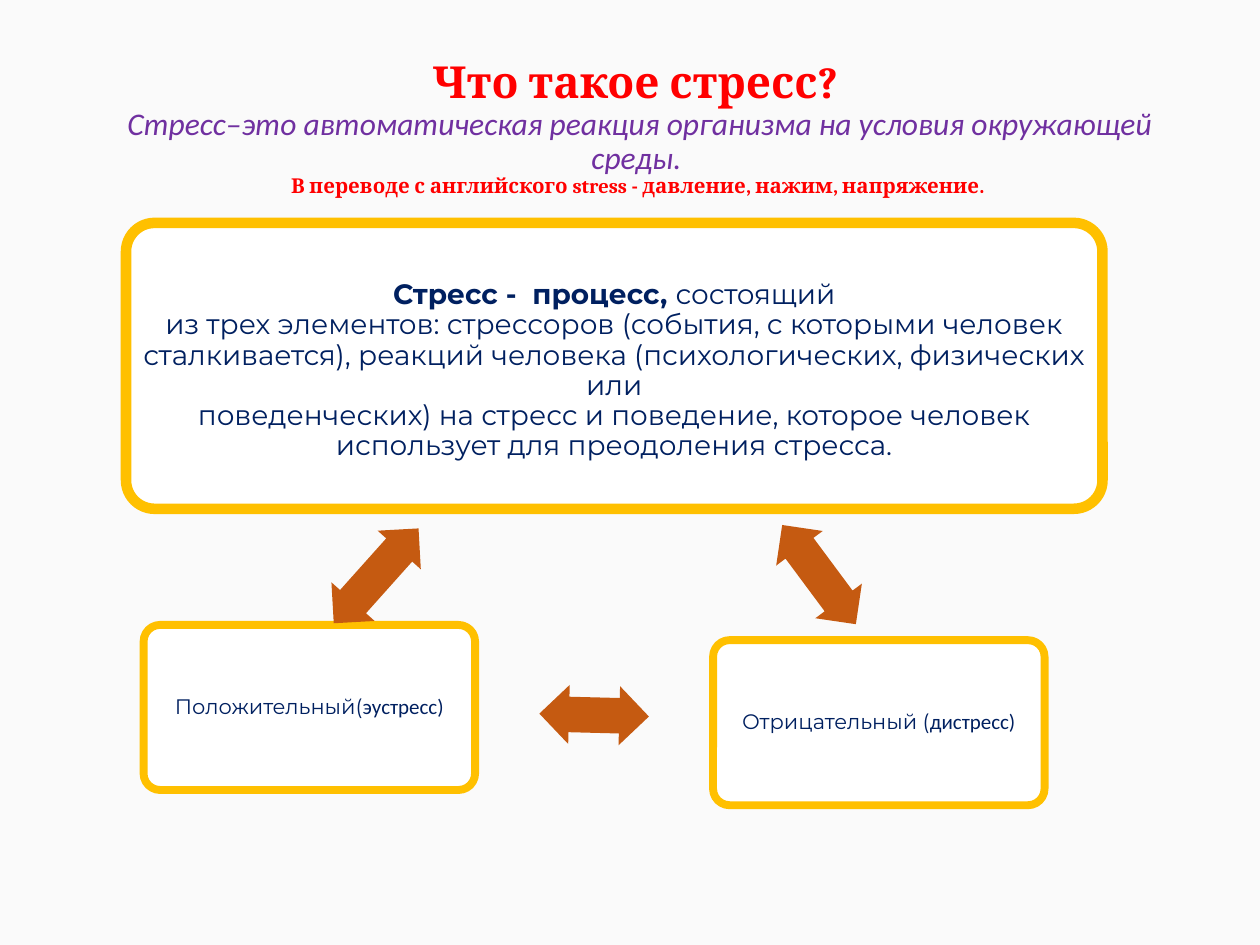
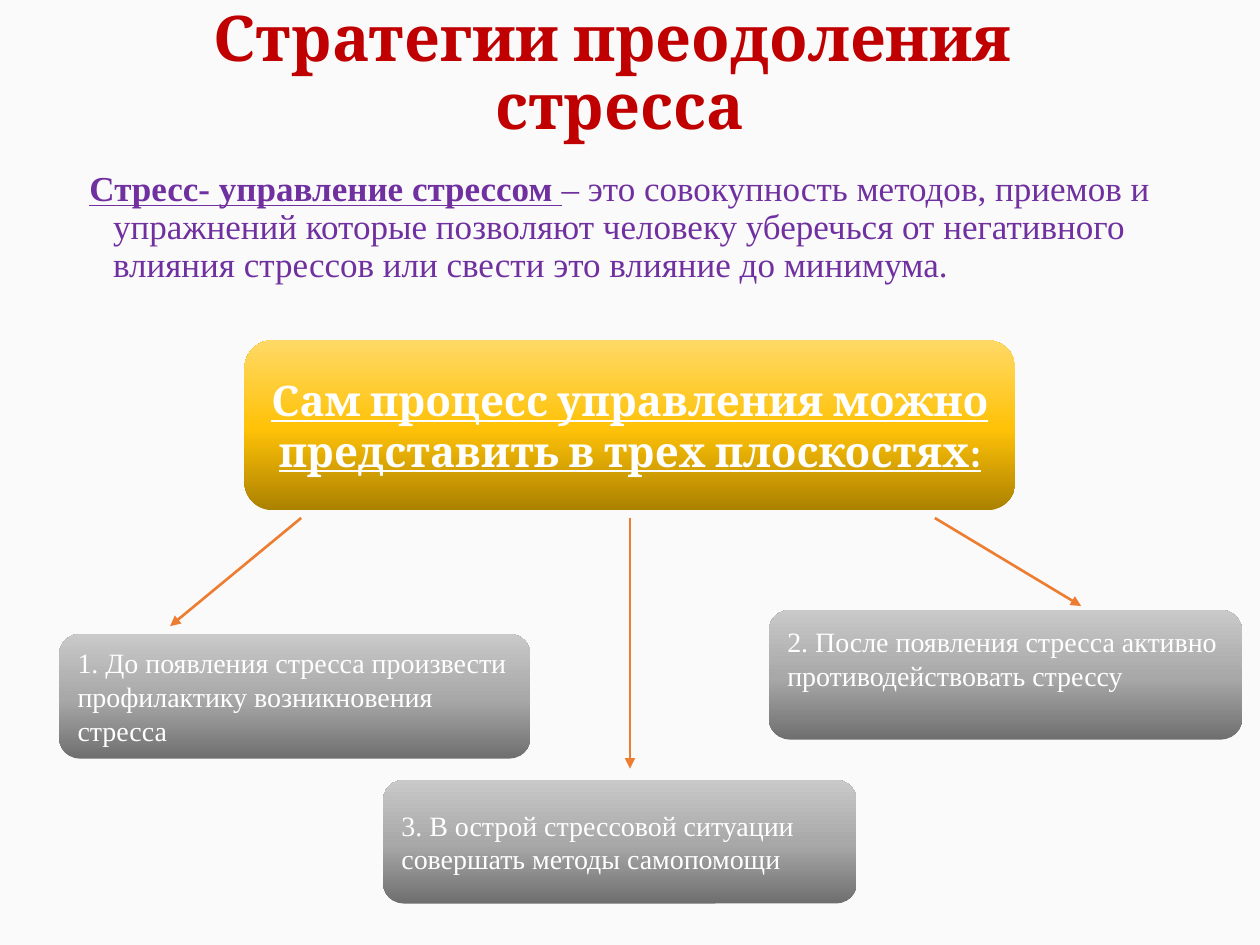
from copy import deepcopy

from lxml.etree import SubElement
from pptx import Presentation
from pptx.dml.color import RGBColor
from pptx.enum.shapes import MSO_CONNECTOR, MSO_SHAPE
from pptx.enum.text import MSO_ANCHOR, MSO_AUTO_SIZE, PP_ALIGN
from pptx.oxml.ns import qn
from pptx.util import Pt

# Theme: colours, type styles and paragraph formats
THEME = {
    "back": "FAFAFA", "white": "FFFFFF", "gold": "FFC000",
    "rust": "C55A11", "line": "ED7D31",
    "amber": ("AB8100", "FFC208", "FFD966"),
    "gray": ("6F6F6F", "A8A8A8", "C9C9C9"),
}
SERIF, SANS, TIMES = "Cambria", "Montserrat", "Times New Roman"
TYPE = {
    "ask": dict(name=SERIF, size=Pt(25.2), bold=True, color="FF0000"),
    "gist": dict(name="Calibri", size=Pt(18), bold=False, italic=True, color="7030A0"),
    "gloss": dict(name=SERIF, size=Pt(11.7), bold=True, color="FF0000"),
    "head": dict(name=SERIF, size=Pt(36), bold=True, color="C00000"),
    "term": dict(name=TIMES, size=Pt(20), bold=True, underline=True, color="7030A0"),
    "body": dict(name=TIMES, size=Pt(20), color="7030A0"),
    "key": dict(name=SANS, size=Pt(16), bold=True, color="002060"),
    "text": dict(name=SANS, size=Pt(16), color="002060"),
    "kind": dict(name=SANS, size=Pt(12), color="002060"),
    "name": dict(name="Calibri", size=Pt(12), color="002060"),
    "main": dict(name=SERIF, size=Pt(24), bold=True, underline=True, color="FFFFFF"),
    "step": dict(name=TIMES, size=Pt(16), color="FFFFFF"),
}
TIGHT = dict(alignment=PP_ALIGN.CENTER, line_spacing=0.9)
MID = dict(alignment=PP_ALIGN.CENTER)
LEFT = dict(alignment=PP_ALIGN.LEFT)
TITLE = dict(auto_size=MSO_AUTO_SIZE.NONE, vertical_anchor=MSO_ANCHOR.MIDDLE,
             word_wrap=True, margin_top=0, margin_bottom=0)


def write(frame, runs, look, form):
    """Fill a text frame with styled runs; a newline is a line break."""
    for key, val in form.items():
        setattr(frame, key, val)
    para = frame.paragraphs[0]
    for key, val in look.items():
        setattr(para, key, val)
    for style, text in runs:
        for num, part in enumerate(text.split("\n")):
            if num:
                para.add_line_break()
                mark = para._p.findall(qn("a:br"))[-1]
            run = para.add_run()
            run.text = part
            for key, val in TYPE[style].items():
                if key == "color":
                    run.font.color.rgb = RGBColor.from_string(val)
                else:
                    setattr(run.font, key, val)
            if num:
                mark.insert(0, deepcopy(run._r.rPr))
            if not part:
                para._p.remove(run._r)


def block(slide, kind, at, fill, adj=(), line=None, turn=0):
    """Add a shape with a plain or three-stop fill."""
    shape = slide.shapes.add_shape(kind, *map(Pt, at))
    shape.shadow.inherit = False
    shape.rotation = turn
    for num, val in enumerate(adj):
        shape.adjustments[num] = val
    if isinstance(fill, str):
        shape.fill.solid()
        shape.fill.fore_color.rgb = RGBColor.from_string(fill)
    else:
        shape.fill.gradient()
        shape.fill.gradient_angle = 90
        stops = shape._element.spPr.find(qn("a:gradFill")).find(qn("a:gsLst"))
        stops.append(deepcopy(stops[0]))
        for stop, tone, pos in zip(shape.fill.gradient_stops, fill, (0, 0.48, 1)):
            stop.color.rgb = RGBColor.from_string(tone)
            stop.position = pos
    if line:
        shape.line.color.rgb = RGBColor.from_string(THEME["gold"])
        shape.line.width = Pt(line)
    else:
        shape.line.fill.background()
    return shape


deck = Presentation()
deck.slide_width, deck.slide_height = Pt(720), Pt(540)
back = deck.slide_master.background.fill
back.solid()
back.fore_color.rgb = RGBColor.from_string(THEME["back"])

# Slide 1: what stress is
slide = deck.slides.add_slide(deck.slide_layouts[5])
title = slide.shapes.title
title.left, title.top, title.width, title.height = map(Pt, (55.4, 30, 620.6, 88))
write(title.text_frame, [
    ("ask", "Что такое стресс? \n"),
    ("gist", "Стресс–это автоматическая реакция организма на условия окружающей среды. \n"),
    ("gloss", "В переводе с английского stress - давление, нажим, напряжение. "),
], TIGHT, TITLE)

# Definition and the two kinds of stress
CARDS = [
    ((72, 127.4, 558, 163.4), 6, 4.5, 10.5, [
        ("key", "Стресс -  процесс, "),
        ("text", "состоящий\nиз трех элементов: стрессоров (события, с которыми человек "
                 "сталкивается), реакций человека (психологических, физических или\n"
                 "поведенческих) на стресс и поведение, которое человек использует "
                 "для преодоления стресса."),
    ]),
    ((407.5, 365.8, 189.4, 94.3), 4.5, 3.8, 3.8,
     [("kind", "Отрицательный ("), ("name", "дистресс)")]),
    ((82.1, 357.1, 189.4, 94.3), 4.5, 3.8, 3.8,
     [("kind", "Положительный("), ("name", "эустресс)")]),
]
for at, line, pad, top, runs in CARDS:
    card = block(slide, MSO_SHAPE.ROUNDED_RECTANGLE, at, THEME["white"], [0.1], line)
    write(card.text_frame, runs, TIGHT, dict(
        word_wrap=True, vertical_anchor=MSO_ANCHOR.MIDDLE, margin_left=Pt(pad),
        margin_right=Pt(pad), margin_top=Pt(top), margin_bottom=Pt(pad)))

# Double arrows between the cards
for at, turn in [((432.7, 311.8, 70.6, 33.1), 53.4),
                 ((308.2, 391.7, 62.6, 33.8), 181.5),
                 ((178.6, 312.5, 72.7, 33.1), 311.8)]:
    block(slide, MSO_SHAPE.LEFT_RIGHT_ARROW, at, THEME["rust"], [0.6, 0.5], turn=turn)

# Slide 2: coping strategies
slide = deck.slides.add_slide(deck.slide_layouts[1])
title, body = slide.placeholders
title.left, title.top, title.width, title.height = map(Pt, (43.9, 0, 620.6, 86))
write(title.text_frame, [("head", "Стратегии преодоления \nстресса")], TIGHT, TITLE)

# Definition with a hanging indent
body.left, body.top, body.width, body.height = map(Pt, (43.9, 94.3, 655.2, 90))
props = body.text_frame.paragraphs[0]._p.get_or_add_pPr()
props.set("marL", str(Pt(13.5)))
props.set("indent", str(-Pt(13.5)))
SubElement(props, qn("a:buNone"))
write(body.text_frame, [
    ("term", "Стресс- управление стрессом\u00a0"),
    ("body", "– это совокупность методов, приемов и упражнений которые позволяют человеку "
             "уберечься от негативного влияния стрессов или свести это влияние до минимума."),
], dict(line_spacing=0.9, space_before=Pt(0)), dict(auto_size=MSO_AUTO_SIZE.NONE))

# Main idea and its three planes
PLANES = [
    ((139.7, 194.4, 440.6, 97.2), "amber", "main", MID, 3.6,
     "Сам процесс управления можно представить в трех плоскостях:"),
    ((33.8, 362.2, 269.3, 71.3), "gray", "step", LEFT, 3.6,
     "1. До появления стресса произвести профилактику возникновения стресса"),
    ((218.9, 445.7, 270.7, 70.6), "gray", "step", LEFT, 3.6,
     "3. В острой стрессовой ситуации совершать методы самопомощи"),
    ((439.2, 348.5, 270.7, 74.2), "gray", "step", LEFT, 22,
     "2. После появления стресса активно противодействовать стрессу"),
]
for at, fill, style, look, low, text in PLANES:
    plane = block(slide, MSO_SHAPE.ROUNDED_RECTANGLE, at, THEME[fill])
    write(plane.text_frame, [(style, text)], look, dict(
        word_wrap=True, vertical_anchor=MSO_ANCHOR.MIDDLE, margin_bottom=Pt(low)))

# Arrows from the main idea
for ends in [(172.1, 296, 97.2, 357.8), (360, 296, 360, 439.2), (534.2, 296, 617.8, 346.3)]:
    arrow = slide.shapes.add_connector(MSO_CONNECTOR.STRAIGHT, *map(Pt, ends))
    arrow.line.color.rgb = RGBColor.from_string(THEME["line"])
    arrow.line.width = Pt(1.5)
    SubElement(arrow.line._get_or_add_ln(), qn("a:tailEnd"), type="triangle")
    SubElement(arrow._element.spPr, qn("a:effectLst"))

deck.save("out.pptx")
